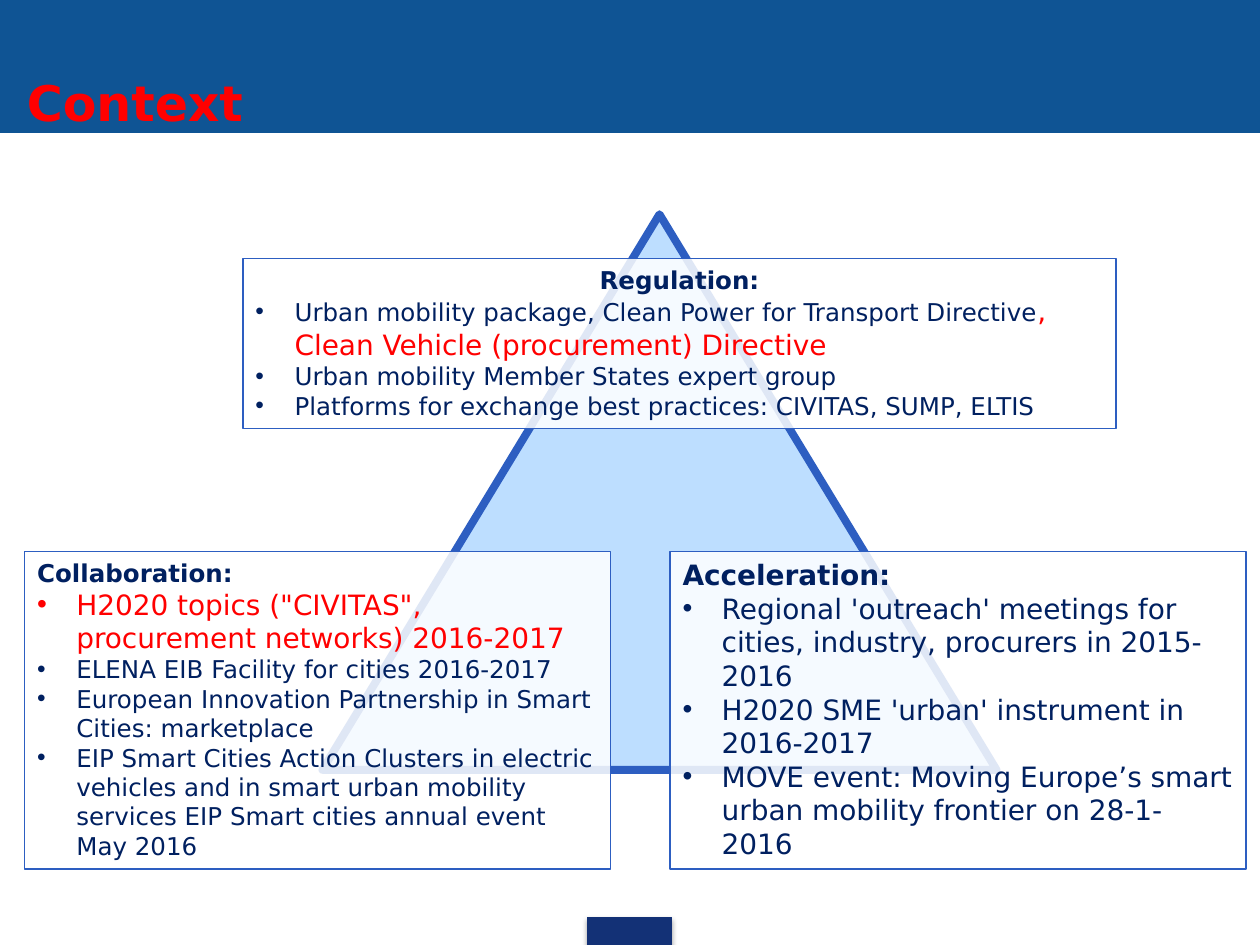
from lxml.etree import SubElement
from pptx import Presentation
from pptx.dml.color import RGBColor
from pptx.enum.shapes import MSO_SHAPE as Shape
from pptx.enum.text import MSO_ANCHOR as Anchor, MSO_AUTO_SIZE as AutoSize, PP_ALIGN as Align
from pptx.oxml.ns import qn
from pptx.util import Cm, Pt

FONT = "DejaVu Sans"
WHITE = RGBColor(0xFF, 0xFF, 0xFF)
RED = RGBColor(0xFF, 0x00, 0x00)
NAVY = RGBColor(0x00, 0x20, 0x60)
BANNER_BLUE = RGBColor(0x0F, 0x54, 0x94)
TAB_BLUE = RGBColor(0x13, 0x31, 0x76)
OUTLINE_BLUE = RGBColor(0x2D, 0x5E, 0xC1)
PALE_BLUE = RGBColor(0xBD, 0xDE, 0xFF)
INDENT = Cm(0.79)

NORMAL = {"size": Pt(14), "bold": False, "color": NAVY}
LARGE = NORMAL | {"size": Pt(16)}
ACCENT = LARGE | {"color": RED}

# Each panel: place in cm, heading with its format and alignment, bullets as runs.
PANELS = [
    {
        "place": (4.9, 5.21, 17.6, 3.43),
        "heading": ("Regulation:", NORMAL, Align.CENTER),
        "bullets": [
            [("Urban mobility package, Clean Power for Transport Directive", NORMAL),
             (", Clean Vehicle (procurement) Directive", ACCENT)],
            [("Urban mobility Member States expert group", NORMAL)],
            [("Platforms for exchange best practices: CIVITAS, SUMP, ELTIS", NORMAL)],
        ],
    },
    {
        "place": (0.5, 11.12, 11.81, 6.4),
        "heading": ("Collaboration:", NORMAL, Align.LEFT),
        "bullets": [
            [('H2020 topics ("CIVITAS", procurement networks) 2016-2017', ACCENT)],
            [("ELENA EIB Facility for cities 2016-2017", NORMAL)],
            [("European Innovation Partnership in Smart Cities: marketplace", NORMAL)],
            [("EIP Smart Cities Action Clusters in electric vehicles and in smart urban "
              "mobility services EIP Smart cities annual event May 2016", NORMAL)],
        ],
    },
    {
        "place": (13.51, 11.12, 11.61, 6.4),
        "heading": ("Acceleration:", LARGE, Align.LEFT),
        "bullets": [
            [("Regional 'outreach' meetings for cities, industry, procurers in 2015-2016", LARGE)],
            [("H2020 SME 'urban' instrument in 2016-2017", LARGE)],
            [("MOVE event: Moving Europe’s smart urban mobility frontier on 28-1-2016", LARGE)],
        ],
    },
]


def set_values(target, values):
    for name, value in values.items():
        setattr(target, name, value)


def add_run(paragraph, text, style):
    run = paragraph.add_run()
    run.text = text
    set_values(run.font, {"name": FONT, "size": style["size"], "bold": style["bold"]})
    run.font.color.rgb = style["color"]


def add_filled(slide, kind, place, fill, outline, width=0.75):
    shape = slide.shapes.add_shape(kind, *map(Cm, place))
    shape.shadow.inherit = False
    shape.fill.solid()
    shape.fill.fore_color.rgb = fill
    shape.line.color.rgb = outline
    shape.line.width = Pt(width)
    return shape


def add_soft_shadow(shape):
    effects = shape._element.spPr.find(qn("a:effectLst"))
    shadow = SubElement(effects, qn("a:outerShdw"), blurRad=str(Pt(3.1)),
                        dist=str(Pt(1.8)), dir="5400000", rotWithShape="0")
    color = SubElement(shadow, qn("a:srgbClr"), val="000000")
    SubElement(color, qn("a:alpha"), val="35000")


def add_bullet(paragraph):
    properties = paragraph._p.get_or_add_pPr()
    properties.set("marL", str(INDENT))
    properties.set("indent", str(-INDENT))
    SubElement(properties, qn("a:buFont"), typeface="Arial")
    SubElement(properties, qn("a:buChar"), char="•")


def add_panel(slide, place, heading, bullets):
    panel = add_filled(slide, Shape.RECTANGLE, place, WHITE, OUTLINE_BLUE)
    fill_color = panel._element.spPr.find(qn("a:solidFill")).find(qn("a:srgbClr"))
    SubElement(fill_color, qn("a:alpha"), val="85000")

    frame = panel.text_frame
    set_values(frame, {"word_wrap": True, "vertical_anchor": Anchor.TOP,
                       "auto_size": AutoSize.SHAPE_TO_FIT_TEXT})
    text, style, alignment = heading
    paragraph = frame.paragraphs[0]
    paragraph.alignment = alignment
    add_run(paragraph, text, style | {"bold": True})
    for runs in bullets:
        paragraph = frame.add_paragraph()
        paragraph.alignment = Align.LEFT
        add_bullet(paragraph)
        for run in runs:
            add_run(paragraph, *run)


def format_title(title):
    set_values(title, {"left": Cm(-0.71), "top": Cm(1.32),
                       "width": Cm(23.6), "height": Cm(1.8)})
    frame = title.text_frame
    set_values(frame, {"word_wrap": True, "vertical_anchor": Anchor.TOP,
                       "auto_size": AutoSize.NONE, "margin_top": Cm(0.15)})
    paragraph = frame.paragraphs[0]
    paragraph.alignment = Align.LEFT
    paragraph._p.get_or_add_pPr().set("marL", str(Cm(1)))
    add_run(paragraph, "Context", {"size": Pt(28), "bold": True, "color": RED})


def main():
    presentation = Presentation()
    set_values(presentation, {"slide_width": Cm(25.4), "slide_height": Cm(19.05)})
    slide = presentation.slides.add_slide(presentation.slide_layouts[5])
    title = slide.shapes.title

    banner = add_filled(slide, Shape.RECTANGLE, (0, 0, 25.4, 2.67), BANNER_BLUE, BANNER_BLUE)
    title._element.addprevious(banner._element)
    format_title(title)

    footer_tab = add_filled(slide, Shape.RECTANGLE, (11.84, 18.49, 1.7, 0.56), TAB_BLUE, TAB_BLUE)
    add_soft_shadow(footer_tab)
    triangle = add_filled(slide, Shape.ISOSCELES_TRIANGLE, (6.5, 4.32, 13.59, 11.2),
                          PALE_BLUE, OUTLINE_BLUE, 4.5)
    SubElement(triangle.line._get_or_add_ln(), qn("a:round"))
    for panel in PANELS:
        add_panel(slide, **panel)

    presentation.save("out.pptx")


if __name__ == "__main__":
    main()
